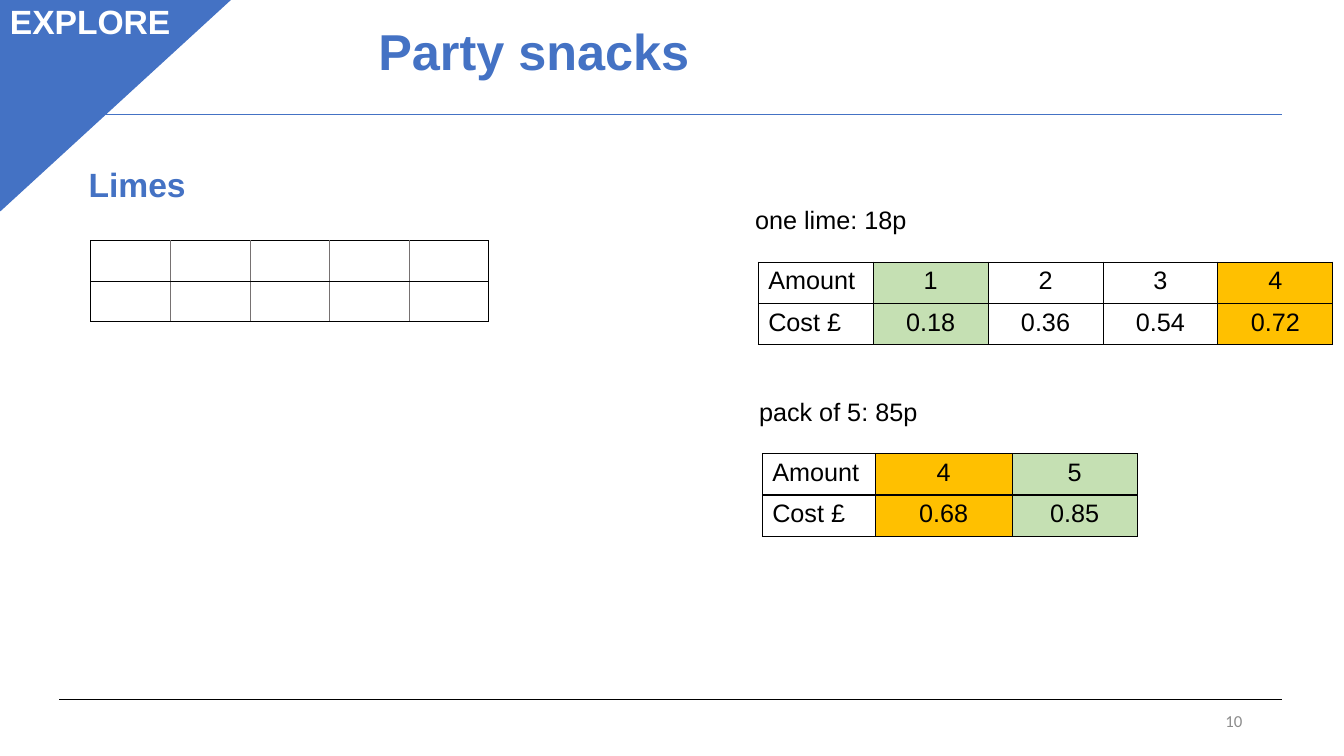
import dataclasses

import lxml.etree
import pptx
import pptx.dml.color
import pptx.enum.shapes
import pptx.enum.text
import pptx.oxml.ns
import pptx.util

Inches = pptx.util.Inches
Align = pptx.enum.text.PP_ALIGN
Anchor = pptx.enum.text.MSO_ANCHOR
qn = pptx.oxml.ns.qn


@dataclasses.dataclass(frozen=True)
class Theme:
    font: str = "Arial"
    number_font: str = "Calibri"
    accent: str = "4472C4"
    ink: str = "000000"
    paper: str = "FFFFFF"
    muted: str = "8C8C8C"
    grid: str = "767171"
    given: str = "C5E0B3"
    answer: str = "FFC000"
    title: int = 36
    heading: int = 24
    body: int = 18
    small: int = 12
    rule: float = 0.75


THEME = Theme()


def rgb(color):
    return pptx.dml.color.RGBColor.from_string(color)


def write(tf, text, size=THEME.body, color=THEME.ink, bold=False,
          font=THEME.font, align=Align.LEFT, spacing=None):
    p = tf.paragraphs[0]
    p.alignment = align
    if spacing:
        p.line_spacing = spacing
    r = p.add_run()
    r.text = text
    r.font.name = font
    r.font.size = pptx.util.Pt(size)
    r.font.bold = bold
    r.font.color.rgb = rgb(color)


def add_text(slide, box, text, anchor=Anchor.TOP, **style):
    tf = slide.shapes.add_textbox(*map(Inches, box)).text_frame
    tf.word_wrap = True
    tf.vertical_anchor = anchor
    write(tf, text, **style)


def add_rule(slide, left, top, width, color):
    line = slide.shapes.add_connector(
        pptx.enum.shapes.MSO_CONNECTOR.STRAIGHT,
        Inches(left), Inches(top), Inches(left + width), Inches(top))
    line.line.color.rgb = rgb(color)
    line.line.width = pptx.util.Pt(THEME.rule)
    lxml.etree.SubElement(line.element.spPr, qn("a:effectLst"))


def add_border(cell, side, color, width):
    tc_pr = cell._tc.get_or_add_tcPr()
    ln = lxml.etree.SubElement(tc_pr, qn(f"a:ln{side}"), w=str(pptx.util.Pt(width)))
    fill = lxml.etree.SubElement(ln, qn("a:solidFill"))
    lxml.etree.SubElement(fill, qn("a:srgbClr"), val=color)


def add_grid(slide, left, top, col_widths, row_height, rows, fills=None, inner=THEME.ink):
    last = len(col_widths) - 1
    table = slide.shapes.add_table(
        len(rows), len(col_widths), Inches(left), Inches(top),
        Inches(sum(col_widths)), Inches(row_height * len(rows))).table
    table.first_row = table.horz_banding = False
    for col, width in zip(table.columns, col_widths):
        col.width = Inches(width)
    for i, values in enumerate(rows):
        table.rows[i].height = Inches(row_height)
        for j, value in enumerate(values):
            cell = table.cell(i, j)
            add_border(cell, "L", inner if j else THEME.ink, THEME.rule)
            add_border(cell, "R", inner if j < last else THEME.ink, THEME.rule)
            add_border(cell, "T", THEME.ink, 1 if i else THEME.rule)
            add_border(cell, "B", THEME.ink, 1)
            if fills and fills[j]:
                cell.fill.solid()
                cell.fill.fore_color.rgb = rgb(fills[j])
            else:
                cell.fill.background()
            if value:
                write(cell.text_frame, value, align=Align.CENTER if j else Align.LEFT)


def add_header(slide, left, top, width, height):
    title = slide.shapes.title
    title.left, title.top = Inches(left), Inches(top)
    title.width, title.height = Inches(width), Inches(height)
    title.text_frame.vertical_anchor = Anchor.MIDDLE
    write(title.text_frame, "Party snacks", size=THEME.title, color=THEME.accent,
          bold=True, align=Align.CENTER, spacing=0.9)


def add_corner(slide, left, top, width, height):
    sp = slide.shapes.add_shape(
        pptx.enum.shapes.MSO_SHAPE.ISOSCELES_TRIANGLE,
        Inches(left), Inches(top), Inches(width), Inches(height))
    sp.adjustments[0] = 0
    sp.rotation = 180
    sp.element.spPr.find(qn("a:xfrm")).set("flipH", "1")
    sp.shadow.inherit = False
    sp.fill.solid()
    sp.fill.fore_color.rgb = rgb(THEME.accent)
    sp.line.color.rgb = rgb(THEME.accent)
    sp.line.width = pptx.util.Pt(1)
    add_text(slide, (left, top - 0.03, 1.84, 0.51), "EXPLORE",
             size=THEME.heading, color=THEME.paper, bold=True)


def add_blank_grid(slide, left, top, width):
    add_text(slide, (left, top, 1.82, 0.5), "Limes",
             size=THEME.heading, color=THEME.accent, bold=True)
    add_grid(slide, left + 0.12, top + 0.81, [width / 5] * 5, 0.4,
             [[""] * 5] * 2, inner=THEME.grid)


def add_prices(slide, left, top, caption, col_widths, amounts, costs, fills):
    add_text(slide, (left, top, 1.89, 0.4), caption)
    add_grid(slide, left + 0.13, top + 0.62, col_widths, 0.41,
             [["Amount", *amounts], ["Cost £", *costs]], [None, *fills])


def add_footer(slide, left, top, width):
    add_rule(slide, left, top, width, THEME.ink)
    add_text(slide, (left + width - 3.3, top + 0.01, 3, 0.4), "10", anchor=Anchor.MIDDLE,
             size=THEME.small, color=THEME.muted, font=THEME.number_font, align=Align.RIGHT)


def main():
    prs = pptx.Presentation()
    prs.slide_width, prs.slide_height = Inches(13.33), Inches(7.5)
    slide = prs.slides.add_slide(prs.slide_layouts[5])
    add_header(slide, 0.63, -0.02, 9.33, 1.11)
    add_rule(slide, 0.59, 1.14, 12.13, THEME.accent)
    add_footer(slide, 0.59, 6.94, 12.13)
    add_corner(slide, 0, -0.01, 2.29, 2.1)
    add_blank_grid(slide, 0.78, 1.58, 3.95)
    add_prices(slide, 7.39, 1.98, "one lime: 18p", [1.14] * 5,
               ["1", "2", "3", "4"], ["0.18", "0.36", "0.54", "0.72"],
               [THEME.given, None, None, THEME.answer])
    add_prices(slide, 7.43, 3.88, "pack of 5: 85p", [1.12, 1.36, 1.24],
               ["4", "5"], ["0.68", "0.85"], [THEME.answer, THEME.given])
    prs.save("out.pptx")


if __name__ == "__main__":
    main()
